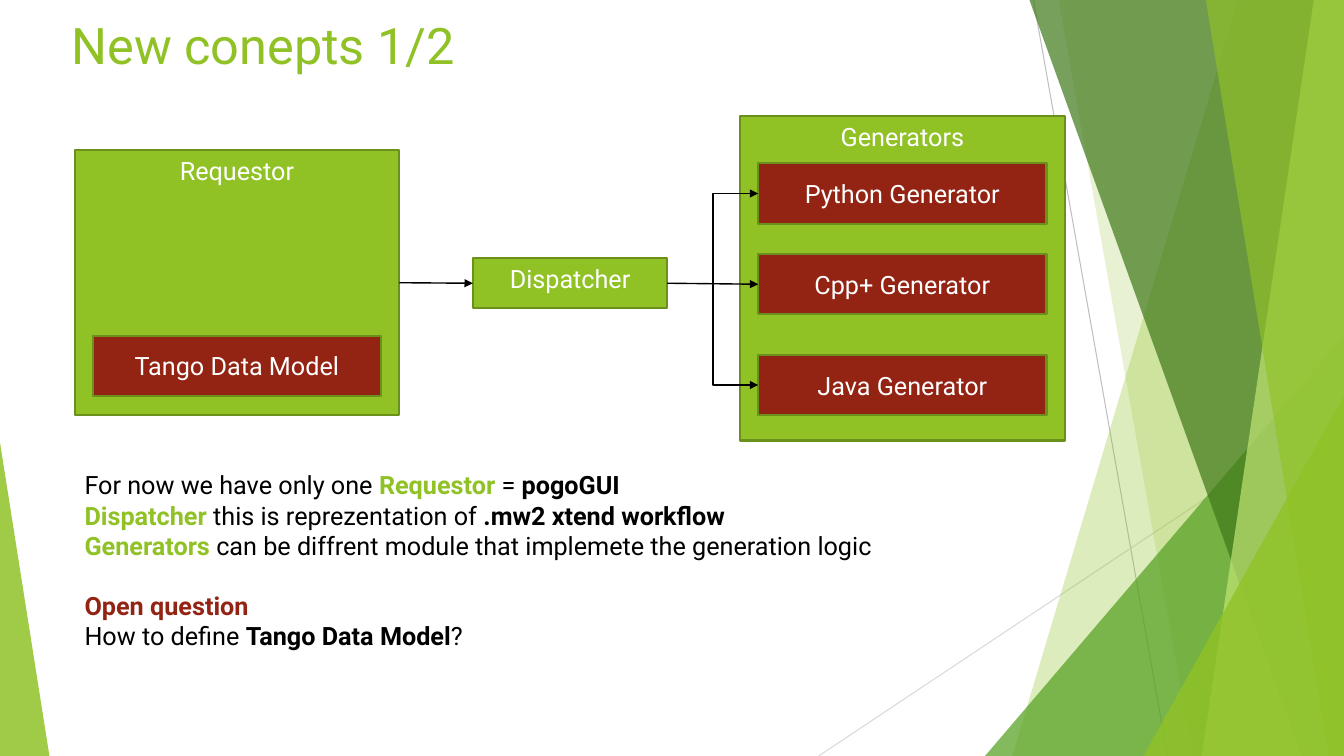
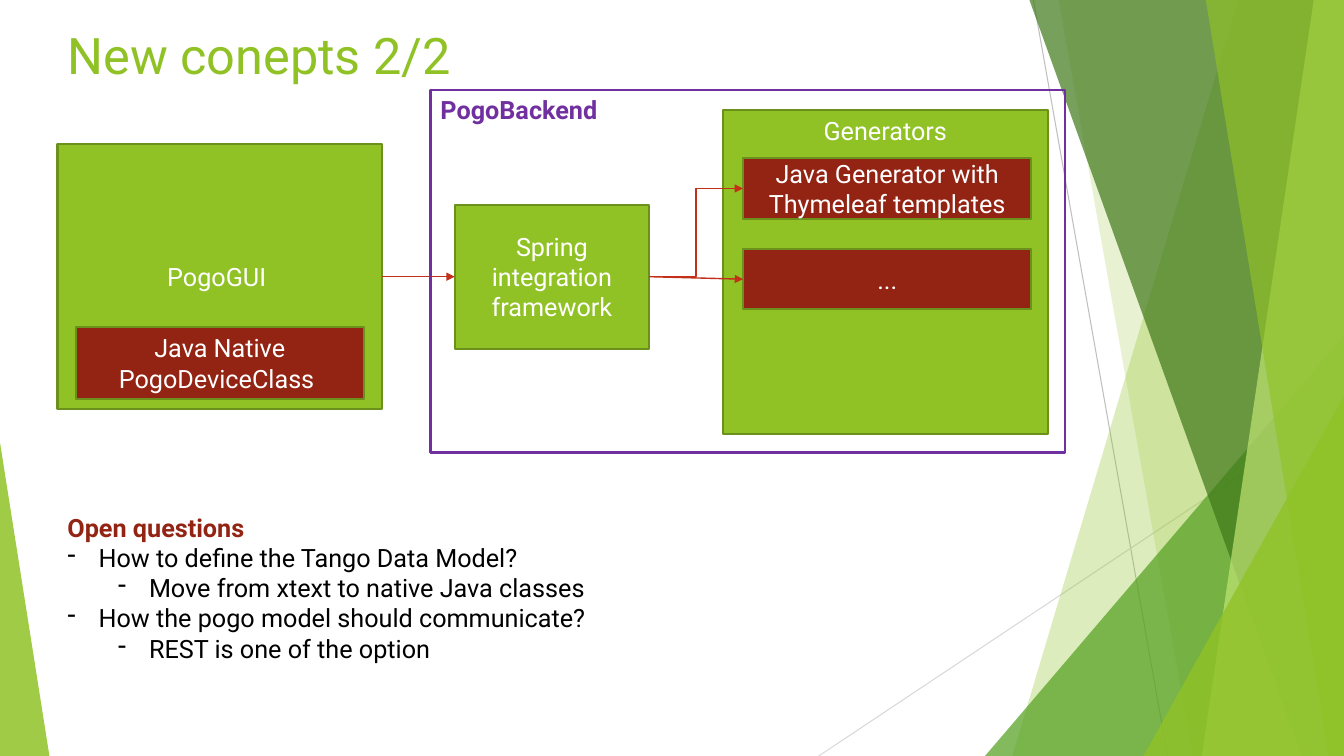
import dataclasses

import lxml.etree
import pptx
import pptx.dml.color
import pptx.enum.shapes
import pptx.enum.text
import pptx.oxml.ns
import pptx.util

PX = 9144  # EMU in one px, 100 px to the inch
WIDTH, HEIGHT = 1333, 750
SHAPES = pptx.enum.shapes.MSO_SHAPE
CONNECTORS = pptx.enum.shapes.MSO_CONNECTOR
ANCHORS = pptx.enum.text.MSO_ANCHOR
LEFT_SITE, RIGHT_SITE = 1, 3


@dataclasses.dataclass(frozen=True)
class Theme:
    font: str = "Roboto"
    title_size: int = 36
    text_size: int = 18
    line_gap: float = 21.5
    border_width: float = 1.5
    arrow_width: float = 1
    hairline_width: float = 0.75
    green: str = "90C226"
    border: str = "6B901C"
    leaf: str = "54A021"
    forest: str = "3F7819"
    lime: str = "C0E474"
    brick: str = "932313"
    red: str = "C42F1A"
    purple: str = "7030A0"
    black: str = "000000"
    white: str = "FFFFFF"
    grey: str = "BFBFBF"
    pale_grey: str = "D9D9D9"


THEME = Theme()


def rgb(color):
    return pptx.dml.color.RGBColor.from_string(color)


def add_xml(parent, tag, **attributes):
    return lxml.etree.SubElement(parent, pptx.oxml.ns.qn(tag), attributes)


def write(para, text, color=THEME.black, size=THEME.text_size, bold=False):
    """Add one formatted span to a paragraph."""
    span = para.add_run()
    span.text = text
    span.font.name = THEME.font
    span.font.size = pptx.util.Pt(size)
    span.font.bold = bold
    span.font.color.rgb = rgb(color)


class Painter:
    def __init__(self, deck):
        self.deck = deck
        self.page = None

    def new_page(self, title, left, top):
        self.page = self.deck.slides.add_slide(self.deck.slide_layouts[6])
        self.backdrop()
        para = self.text_frame(left, top, 940, 87).paragraphs[0]
        write(para, title, color=THEME.green, size=THEME.title_size)

    # Background facets
    def backdrop(self):
        self.line((1025, 0), (1158, HEIGHT), THEME.grey, THEME.hairline_width)
        self.line((WIDTH, 403), (812, HEIGHT), THEME.pale_grey, THEME.hairline_width)
        self.facet(1228, 1004, THEME.green, 30)
        self.facet(1050, 1183, THEME.green, 20)
        self.triangle(977, 333, 356, THEME.leaf, 72, apex=1)
        self.facet(1021, 1291, THEME.forest, 70)
        self.facet(1303, 1192, THEME.lime, 70)
        self.facet(1196, 1318, THEME.green, 65)
        self.triangle(1134, 393, 199, THEME.green, 80, apex=1)
        self.triangle(0, 439, 49, THEME.green, 85, apex=0)

    def facet(self, top_x, bottom_x, color, opacity):
        """Full-height band from a slanted left edge to the right page edge."""
        builder = self.page.shapes.build_freeform(top_x, 0, scale=PX)
        builder.add_line_segments([(WIDTH, 0), (WIDTH, HEIGHT), (bottom_x, HEIGHT)])
        self.tint(builder.convert_to_shape(), color, opacity)

    def triangle(self, left, top, width, color, opacity, apex):
        shape = self.shape(SHAPES.ISOSCELES_TRIANGLE, left, top, width, HEIGHT - top)
        shape.adjustments[0] = apex
        self.tint(shape, color, opacity)

    def tint(self, shape, color, opacity):
        shape.shadow.inherit = False
        shape.line.fill.background()
        shape.fill.solid()
        shape.fill.fore_color.rgb = rgb(color)
        value = shape._element.spPr.find(".//" + pptx.oxml.ns.qn("a:srgbClr"))
        add_xml(value, "a:alpha", val=str(opacity * 1000))

    # Lines and arrows
    def line(self, start, end, color, width, kind=CONNECTORS.STRAIGHT, arrow=False):
        ends = [round(length * PX) for length in (*start, *end)]
        line = self.page.shapes.add_connector(kind, *ends)
        line.line.color.rgb = rgb(color)
        line.line.width = pptx.util.Pt(width)
        if arrow:
            outline = line._element.spPr.find(pptx.oxml.ns.qn("a:ln"))
            add_xml(outline, "a:tailEnd", type="triangle")
        add_xml(line._element.spPr, "a:effectLst")
        return line

    def arrow(self, source, target, color=THEME.black, bent=False):
        """Join the right side of one box to the left side of another."""
        start = (source.left + source.width) / PX, (source.top + source.height / 2) / PX
        end = target.left / PX, (target.top + target.height / 2) / PX
        kind = CONNECTORS.ELBOW if bent else CONNECTORS.STRAIGHT
        line = self.line(start, end, color, THEME.arrow_width, kind, arrow=True)
        line.begin_connect(source, RIGHT_SITE)
        line.end_connect(target, LEFT_SITE)

    # Boxes and text
    def shape(self, preset, left, top, width, height):
        place = [length * PX for length in (left, top, width, height)]
        return self.page.shapes.add_shape(preset, *place)

    def box(self, left, top, width, height, *lines, fill=THEME.green,
            border=THEME.border, color=THEME.white, anchor=ANCHORS.MIDDLE,
            align=pptx.enum.text.PP_ALIGN.CENTER, bold=False):
        box = self.shape(SHAPES.RECTANGLE, left, top, width, height)
        box.shadow.inherit = False
        if fill:
            box.fill.solid()
            box.fill.fore_color.rgb = rgb(fill)
        else:
            box.fill.background()
        box.line.color.rgb = rgb(border)
        box.line.width = pptx.util.Pt(THEME.border_width)
        frame = box.text_frame
        frame.word_wrap = True
        frame.vertical_anchor = anchor
        for index, text in enumerate(lines):
            para = frame.add_paragraph() if index else frame.paragraphs[0]
            para.alignment = align
            write(para, text, color=color, bold=bold)
        return box

    def module(self, left, top, text, height=60):
        return self.box(left, top, 286, height, text, fill=THEME.brick)

    def text_frame(self, left, top, width, height):
        place = [length * PX for length in (left, top, width, height)]
        frame = self.page.shapes.add_textbox(*place).text_frame
        frame.word_wrap = True
        return frame

    def text_block(self, left, top, width, height, lines):
        """Write lines, each a tuple of (spans, gap before, bullet level)."""
        frame = self.text_frame(left, top, width, height)
        for index, (spans, gap, level) in enumerate(lines):
            para = frame.add_paragraph() if index else frame.paragraphs[0]
            if gap:
                para.space_before = pptx.util.Pt(gap)
            if level is not None:
                para.level = level
                props = para._p.get_or_add_pPr()
                props.set("marL", str((31 + 50 * level) * PX))
                props.set("indent", str(-31 * PX))
                add_xml(props, "a:buChar", char="-")
            for text, style in spans:
                write(para, text, **style)


PLAIN = {}
STRONG = {"bold": True}
GREEN = {"color": THEME.green, "bold": True}
BRICK = {"color": THEME.brick, "bold": True}


def current_design(painter):
    painter.new_page("New conepts 1/2", 61, 9)
    requestor = painter.box(74, 149, 322, 263, "Requestor", anchor=ANCHORS.TOP)
    painter.module(92, 333, "Tango Data Model")
    dispatcher = painter.box(469, 256, 193, 50, "Dispatcher", anchor=ANCHORS.TOP)
    painter.box(734, 115, 322, 322, "Generators", anchor=ANCHORS.TOP)
    python, cpp, java = [
        painter.module(752, top, f"{language} Generator")
        for language, top in (("Python", 162), ("Cpp+", 252), ("Java", 352))
    ]
    painter.arrow(requestor, dispatcher)
    painter.arrow(dispatcher, python, bent=True)
    painter.arrow(dispatcher, java, bent=True)
    painter.arrow(dispatcher, cpp)
    painter.text_block(74, 461, 842, 222, [
        ([("For now we have only one ", PLAIN), ("Requestor", GREEN),
          (" = ", PLAIN), ("pogoGUI", STRONG)], 0, None),
        ([("Dispatcher", GREEN), (" this is reprezentation of ", PLAIN),
          (".mw2 xtend workflow", STRONG)], 0, None),
        ([("Generators", GREEN),
          (" can be diffrent module that implemete the generation logic", PLAIN)], 0, None),
        ([("Open question", BRICK)], THEME.line_gap, None),
        ([("How to define ", PLAIN), ("Tango Data Model", STRONG), ("?", PLAIN)], 0, None),
    ])


def proposed_design(painter):
    painter.new_page("New conepts 2/2", 57, 19)
    gui = painter.box(57, 143, 322, 263, "PogoGUI ")
    painter.module(75, 324, "Java Native PogoDeviceClass ", height=72)
    framework = painter.box(451, 203, 193, 143, "Spring integration", "framework")
    painter.box(717, 109, 322, 322, "Generators", anchor=ANCHORS.TOP)
    java = painter.module(737, 157, "Java Generator with Thymeleaf templates")
    others = painter.module(737, 247, "...")
    painter.arrow(gui, framework, THEME.red)
    painter.arrow(framework, java, THEME.red, bent=True)
    painter.arrow(framework, others, THEME.red)
    painter.box(427, 89, 629, 360, "PogoBackend", fill=None, border=THEME.purple,
                color=THEME.purple, anchor=ANCHORS.TOP,
                align=pptx.enum.text.PP_ALIGN.LEFT, bold=True)
    questions = [
        ("How to define the Tango Data Model?", 0),
        ("Move from xtext to native Java classes", 1),
        ("How the pogo model should communicate?", 0),
        ("REST is one of the option", 1),
    ]
    painter.text_block(57, 503, 667, 162, [
        ([("Open questions", BRICK)], 0, None),
        *[([(text, PLAIN)], 0, level) for text, level in questions],
    ])


def main():
    deck = pptx.Presentation()
    deck.slide_width, deck.slide_height = WIDTH * PX, HEIGHT * PX
    painter = Painter(deck)
    current_design(painter)
    proposed_design(painter)
    deck.save("out.pptx")


if __name__ == "__main__":
    main()
